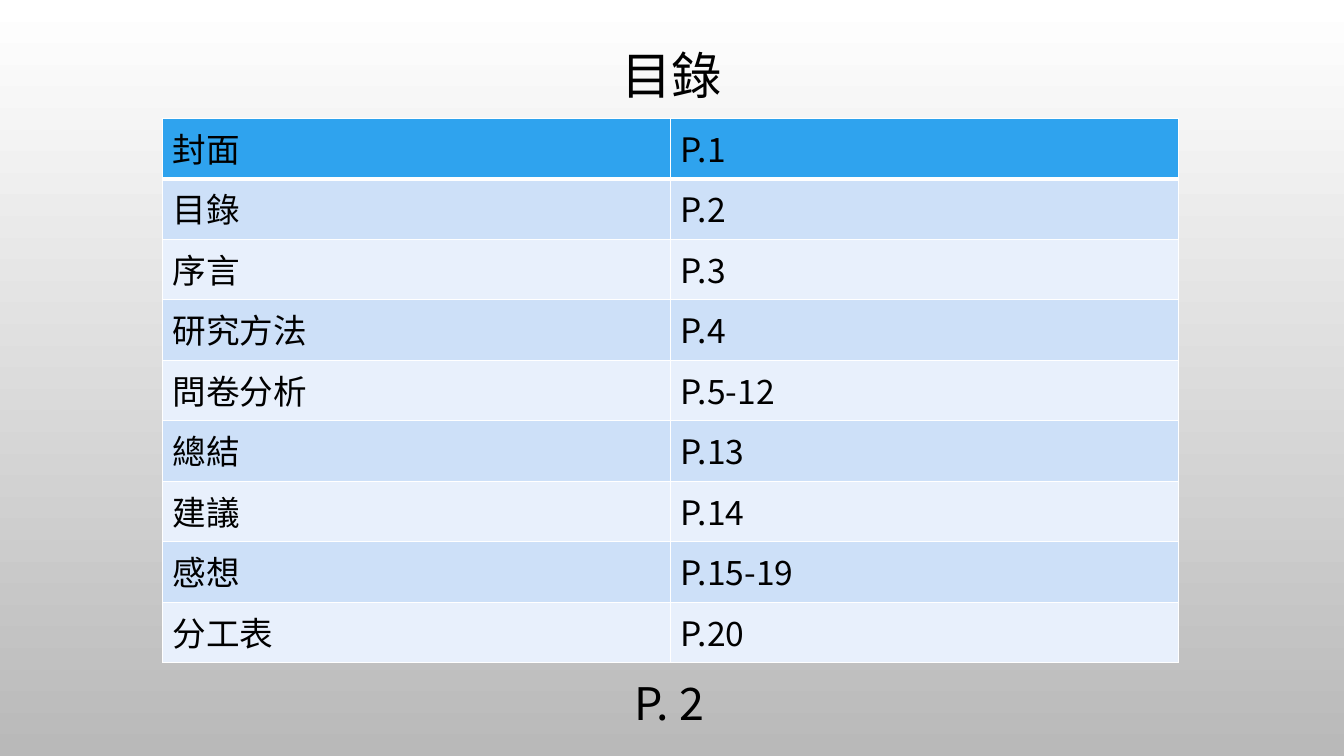
from lxml import etree
from pptx import Presentation
from pptx import util as u
from pptx.dml.color import RGBColor
from pptx.enum import text as t
from pptx.oxml import ns

BLACK = RGBColor(0x00, 0x00, 0x00)
WHITE = RGBColor(0xFF, 0xFF, 0xFF)
GREY = RGBColor(0xB9, 0xB9, 0xB9)
BLUE = RGBColor(0x2F, 0xA3, 0xEE)
SKY = RGBColor(0xCD, 0xE0, 0xF8)
PALE = RGBColor(0xE8, 0xF0, 0xFC)

ROWS = [
    ("封面", "P.1"),
    ("目錄", "P.2"),
    ("序言", "P.3"),
    ("研究方法", "P.4"),
    ("問卷分析", "P.5-12"),
    ("總結", "P.13"),
    ("建議", "P.14"),
    ("感想", "P.15-19"),
    ("分工表", "P.20"),
]


class Deck:
    """Holds the style and the current slide."""

    font = "Noto Sans CJK SC"

    def __init__(self, wide, high):
        self.prs = Presentation()
        self.prs.slide_width = u.Cm(wide)
        self.prs.slide_height = u.Cm(high)
        self.slide = self.prs.slides.add_slide(self.prs.slide_layouts[5])

    def back(self, top, base):
        fill = self.slide.background.fill
        fill.gradient()
        fill.gradient_angle = 270
        for stop, place, tone in zip(fill.gradient_stops, (0, 1), (top, base)):
            stop.position = place
            stop.color.rgb = tone

    def letter(self, frame, words, size, align=t.PP_ALIGN.LEFT):
        para = frame.paragraphs[0]
        para.text = words
        para.alignment = align
        font = para.font
        font.size = u.Pt(size)
        font.name = self.font
        font.bold = False
        font.color.rgb = BLACK
        props = para._p.pPr.find(ns.qn("a:defRPr"))
        etree.SubElement(props, ns.qn("a:ea"), typeface=self.font)
        return para

    def title(self, words, left, top, wide, high):
        shape = self.slide.shapes.title
        shape.left, shape.top = u.Cm(left), u.Cm(top)
        shape.width, shape.height = u.Cm(wide), u.Cm(high)
        shape.text_frame.vertical_anchor = t.MSO_ANCHOR.MIDDLE
        para = self.letter(shape.text_frame, words, 36, t.PP_ALIGN.CENTER)
        para.line_spacing = 0.9

    def label(self, words, left, top, wide, high):
        box = self.slide.shapes.add_textbox(
            u.Cm(left), u.Cm(top), u.Cm(wide), u.Cm(high))
        box.text_frame.word_wrap = True
        self.letter(box.text_frame, words, 32, t.PP_ALIGN.CENTER)

    def edge(self, cell, top, base):
        props = cell._tc.get_or_add_tcPr()
        sides = (("L", 1), ("R", 1), ("T", top), ("B", base))
        for spot, (side, width) in enumerate(sides):
            line = etree.Element(ns.qn(f"a:ln{side}"), w=str(u.Pt(width)))
            fill = etree.SubElement(line, ns.qn("a:solidFill"))
            etree.SubElement(fill, ns.qn("a:srgbClr"), val=str(WHITE))
            props.insert(spot, line)

    def table(self, rows, left, top, wide, high):
        grid = self.slide.shapes.add_table(
            len(rows), len(rows[0]),
            u.Cm(left), u.Cm(top), u.Cm(wide), u.Cm(high)).table
        grid.first_row = grid.horz_banding = False
        for r, row in enumerate(rows):
            for c, words in enumerate(row):
                cell = grid.cell(r, c)
                self.letter(cell.text_frame, words, 24)
                cell.fill.solid()
                cell.fill.fore_color.rgb = (
                    BLUE if r == 0 else SKY if r % 2 else PALE)
                self.edge(cell, 3 if r == 1 else 1, 3 if r == 0 else 1)


def main():
    deck = Deck(33.87, 19.05)
    deck.back(WHITE, GREY)
    deck.title("目錄", 2.54, 1.07, 28.78, 1.8)
    deck.table(ROWS, 4.1, 2.98, 25.6, 13.72)
    deck.label("P. 2", 15.14, 16.89, 3.45, 1.63)
    deck.prs.save("out.pptx")


if __name__ == "__main__":
    main()
